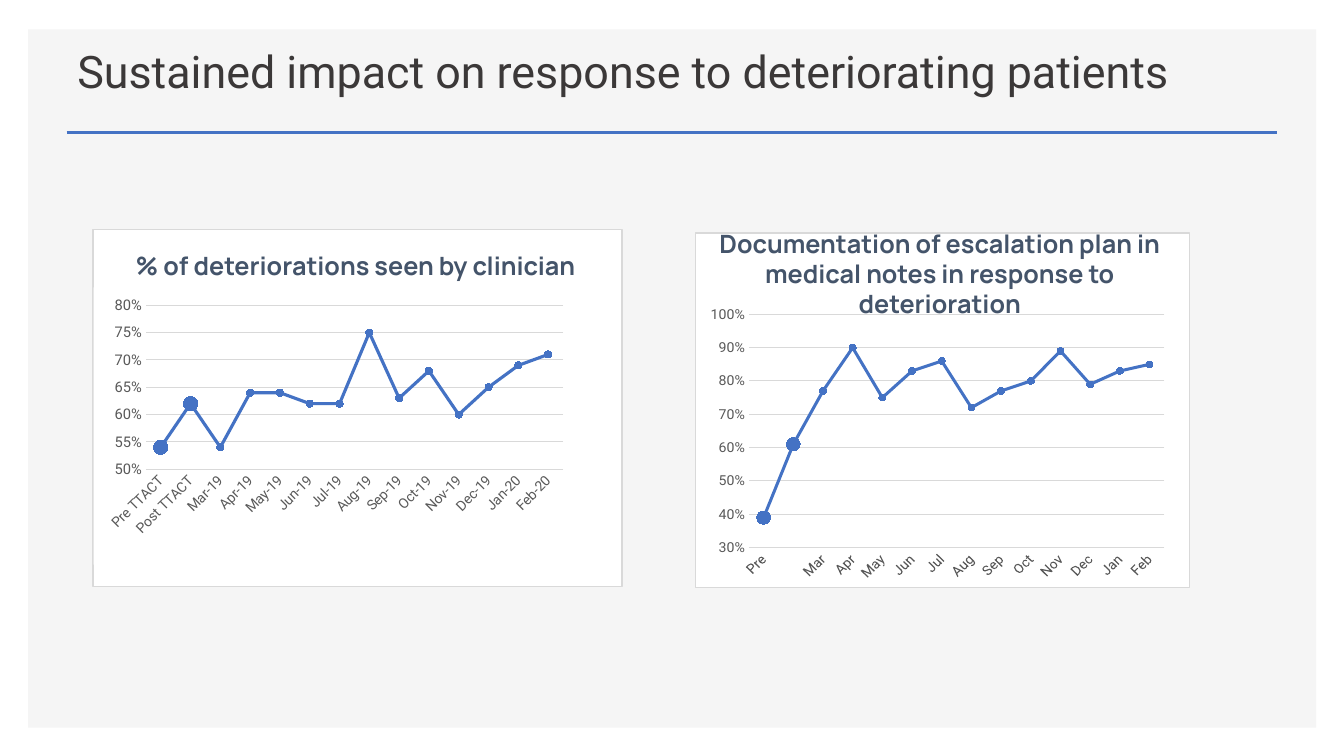
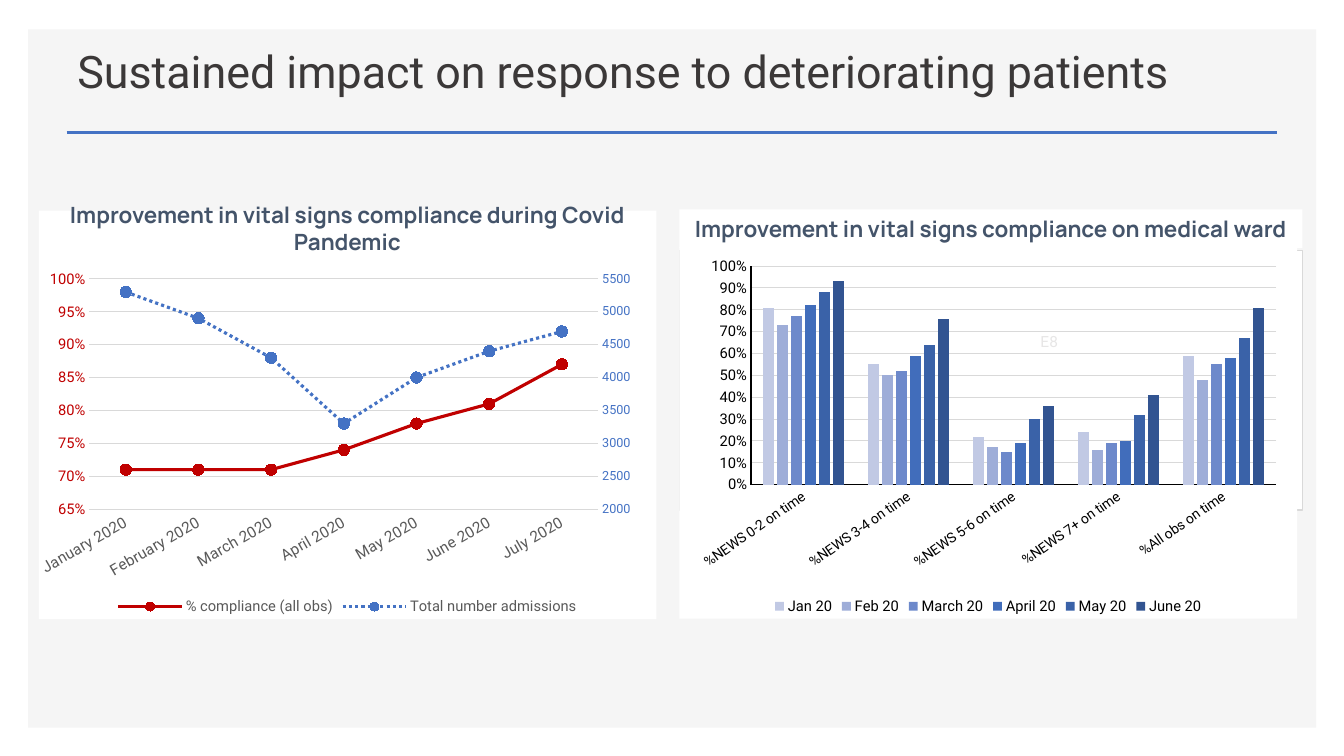
from copy import deepcopy

from pptx import Presentation
from pptx.chart.axis import ValueAxis
from pptx.chart.data import CategoryChartData
from pptx.dml.color import RGBColor
from pptx.enum.chart import XL_CHART_TYPE, XL_LEGEND_POSITION, XL_MARKER_STYLE, XL_TICK_MARK
from pptx.enum.dml import MSO_LINE
from pptx.enum.shapes import MSO_CONNECTOR, MSO_SHAPE
from pptx.enum.text import MSO_ANCHOR, MSO_AUTO_SIZE, PP_ALIGN
from pptx.oxml import parse_xml
from pptx.oxml.ns import nsdecls, qn
from pptx.util import Cm, Pt

WHITE, PALE, GRID, GREY, BLACK = "FFFFFF", "F5F5F5", "D9D9D9", "595959", "000000"
BLUE, RED, SLATE, CHARCOAL, FAINT = "4472C4", "C00000", "44546A", "3B3838", "E7E6E6"
BODY_FONT, HEADING_FONT = "Roboto", "Manrope"
TITLE = "Sustained impact on response to deteriorating patients"


def color(value):
    return RGBColor.from_string(value)


def style_font(font, size, value, name=BODY_FONT, bold=False):
    font.size, font.name, font.bold = Pt(size), name, bold
    font.color.rgb = color(value)


MONTHS = ["Mar", "Apr", "May", "Jun", "Jul", "Aug", "Sep", "Oct", "Nov", "Dec", "Jan", "Feb"]
DATED_MONTHS = [f"{month}-{19 if i < 10 else 20}" for i, month in enumerate(MONTHS)]

escalation_chart = {
    "at": (17.91, 7.42, 11.66, 7.21), "kind": XL_CHART_TYPE.LINE_MARKERS_STACKED,
    "plot": (0.047, 0.075, 0.933, 0.878), "range": (0.3, 1, 0.1),
    "categories": ["Pre", ""] + MONTHS, "category_font": (10.5, GREY), "rotation": -45,
    "value_color": GREY, "axis_line": GRID, "marker": 5, "large_points": 2,
    "series": [("Series 1", BLUE, [0.39, 0.61, 0.77, 0.9, 0.75, 0.83, 0.86,
                                   0.72, 0.77, 0.8, 0.89, 0.79, 0.83, 0.85])],
}
clinician_chart = {
    "at": (2.36, 7.24, 13.16, 6.99), "kind": XL_CHART_TYPE.LINE_MARKERS,
    "plot": (0.1, 0.065, 0.799, 0.591), "range": (0.5, 0.8, 0.05),
    "categories": ["Pre TTACT", "Post TTACT"] + DATED_MONTHS,
    "category_font": (10, GREY), "rotation": -45,
    "value_color": GREY, "axis_line": GRID, "marker": 5, "large_points": 2,
    "series": [("Series 1", BLUE, [0.54, 0.62, 0.54, 0.64, 0.64, 0.62, 0.62,
                                   0.75, 0.63, 0.68, 0.6, 0.65, 0.69, 0.71])],
}
pandemic_chart = {
    "at": (0.97, 5.31, 15.57, 10.29), "kind": XL_CHART_TYPE.LINE_MARKERS,
    "plot": (0.082, 0.167, 0.824, 0.564), "range": (0.65, 1, 0.05),
    "categories": [f"{month} 2020" for month in
                   ("January", "February", "March", "April", "May", "June", "July")],
    "category_font": (11, GREY), "rotation": -30,
    "value_color": RED, "axis_line": GRID, "marker": 8, "large_points": 0,
    "legend_color": GREY, "right_range": (2000, 5500, 500),
    "series": [("% compliance (all obs)", RED, [0.71, 0.71, 0.71, 0.74, 0.78, 0.81, 0.87]),
               ("Total number admissions", BLUE, [5300, 4900, 4300, 3300, 4000, 4400, 4700])],
}
ward_chart = {
    "at": (17.12, 6.22, 15.57, 9.37), "kind": XL_CHART_TYPE.COLUMN_CLUSTERED,
    "plot": (0.116, 0.052, 0.85, 0.588), "range": (0, 1, 0.1),
    "categories": ["%NEWS 0-2 on time", "%NEWS 3-4 on time", "%NEWS 5-6 on time",
                   "%NEWS 7+ on time", "%All obs on time"],
    "category_font": (10, BLACK), "rotation": -35,
    "value_color": BLACK, "axis_line": BLACK, "legend_color": BLACK, "title": "E8",
    "series": [("Jan 20", "C1C9E4", [0.81, 0.55, 0.22, 0.24, 0.59]),
               ("Feb 20", "9EADD8", [0.73, 0.5, 0.17, 0.16, 0.48]),
               ("March 20", "6D89CB", [0.77, 0.52, 0.15, 0.19, 0.55]),
               ("April 20", "416DBB", [0.82, 0.59, 0.19, 0.2, 0.58]),
               ("May 20", "3A62A8", [0.88, 0.64, 0.3, 0.32, 0.67]),
               ("June 20", "325491", [0.93, 0.76, 0.36, 0.41, 0.81])],
}

# Each page: framed panels, charts, headings (place, size, fill, text)
pages = [
    {"panels": [(17.53, 5.87, 12.45, 8.94), (2.34, 5.79, 13.34, 8.99)],
     "charts": [escalation_chart, clinician_chart],
     "headings": [
         ((17.35, 5.99, 12.67, 1.8), 18, None,
          "Documentation of escalation plan in medical notes in response to deterioration"),
         ((2.51, 6.17, 12.9, 1.02), 18, WHITE, "% of deteriorations seen by clinician")]},
    {"panels": [(17.12, 6.32, 15.7, 6.53)],
     "charts": [pandemic_chart, ward_chart],
     "headings": [
         ((0.97, 5.26, 15.57, 0.97), 16, None,
          "Improvement in vital signs compliance during Covid Pandemic"),
         ((17.12, 5.28, 15.7, 0.97), 16, WHITE,
          "Improvement in vital signs compliance on medical ward")]},
]

deck = Presentation()
deck.slide_width, deck.slide_height = Cm(33.87), Cm(19.05)

for content in pages:
    page = deck.slides.add_slide(deck.slide_layouts[6])

    # Backdrop and framed panels
    backdrop = (0.71, 0.74, 32.46, 17.6)
    for place in [backdrop] + content["panels"]:
        panel = page.shapes.add_shape(MSO_SHAPE.RECTANGLE, *map(Cm, place))
        panel.shadow.inherit = False
        panel.fill.solid()
        if place == backdrop:
            panel.fill.fore_color.rgb = color(PALE)
            panel.line.fill.background()
        else:
            panel.fill.fore_color.rgb = color(WHITE)
            panel.line.color.rgb = color(GRID)
            panel.line.width = Pt(1)

    # Title and rule
    rule = page.shapes.add_connector(MSO_CONNECTOR.STRAIGHT, Cm(1.68), Cm(3.33), Cm(32.18), Cm(3.33))
    rule.line.color.rgb = color(BLUE)
    rule.line.width = Pt(2)
    rule._element.spPr.append(parse_xml(f"<a:effectLst {nsdecls('a')}/>"))
    title_box = page.shapes.add_textbox(Cm(1.7), Cm(1.12), Cm(30.48), Cm(1.8))
    title_box.text_frame.word_wrap = True
    title_box.text_frame.text = TITLE
    para = title_box.text_frame.paragraphs[0]
    para.line_spacing = 0.9
    style_font(para.runs[0].font, 32, CHARCOAL)

    # Charts
    for item in content["charts"]:
        data = CategoryChartData()
        data.categories = item["categories"]
        for name, _, values in item["series"]:
            data.add_series(name, values)
        chart = page.shapes.add_chart(item["kind"], *map(Cm, item["at"]), data).chart
        style_font(chart.font, 10, BLACK)
        chart.has_title = "title" in item
        chart.has_legend = "legend_color" in item
        if chart.has_legend:
            chart.legend.position = XL_LEGEND_POSITION.BOTTOM
            chart.legend.include_in_layout = False
            style_font(chart.legend.font, 10.5, item["legend_color"])
        plot = chart.plots[0]
        plot.vary_by_categories = False

        # Series
        columns = item["kind"] == XL_CHART_TYPE.COLUMN_CLUSTERED
        if columns:
            plot.gap_width, plot.overlap = 219, -27
        for series, (_, series_color, _) in zip(plot.series, item["series"]):
            if columns:
                series.format.fill.solid()
                series.format.fill.fore_color.rgb = color(series_color)
                continue
            series.smooth = False
            large_points = [series.points[i] for i in range(item["large_points"])]
            for target in [series] + large_points:
                target.format.line.color.rgb = color(series_color)
                target.format.line.width = Pt(2.25)
                marker = target.marker
                marker.style = XL_MARKER_STYLE.CIRCLE
                marker.size = item["marker"] if target is series else 10
                marker.format.fill.solid()
                marker.format.fill.fore_color.rgb = color(series_color)
                marker.format.line.color.rgb = color(series_color)

        # Second axis on the right
        axes = [(chart.value_axis, item["range"], 10.5, item["value_color"], "0%")]
        if "right_range" in item:
            plot.series[1].format.line.dash_style = MSO_LINE.ROUND_DOT
            left_lines = plot._element
            right_lines = deepcopy(left_lines)
            left_lines.remove(left_lines.findall(qn("c:ser"))[1])
            right_lines.remove(right_lines.findall(qn("c:ser"))[0])
            left_lines.addnext(right_lines)
            right_category = deepcopy(chart.category_axis._element)
            right_value = deepcopy(chart.value_axis._element)
            chart.value_axis._element.addnext(right_value)
            right_value.addnext(right_category)
            for element, number in zip(right_lines.findall(qn("c:axId")), ("5001", "5002")):
                element.set("val", number)
            for axis, own, other in ((right_category, "5001", "5002"), (right_value, "5002", "5001")):
                axis.find(qn("c:axId")).set("val", own)
                axis.find(qn("c:crossAx")).set("val", other)
            right_category.find(qn("c:delete")).set("val", "1")
            right_value.find(qn("c:axPos")).set("val", "r")
            right_value.find(qn("c:crosses")).set("val", "max")
            axes.append((ValueAxis(right_value), item["right_range"], 9, BLUE, "0"))

        # Axes
        for axis, (low, high, step), size, label_color, number_format in axes:
            axis.minimum_scale, axis.maximum_scale, axis.major_unit = low, high, step
            axis.major_tick_mark = axis.minor_tick_mark = XL_TICK_MARK.NONE
            axis.tick_labels.number_format = number_format
            axis.tick_labels.number_format_is_linked = False
            style_font(axis.tick_labels.font, size, label_color)
            axis.has_major_gridlines = axis is axes[0][0]
            if columns:
                axis.format.line.color.rgb = color(item["axis_line"])
                axis.format.line.width = Pt(0.75)
            else:
                axis.format.line.fill.background()
        grid_line = axes[0][0].major_gridlines.format.line
        grid_line.color.rgb = color(GRID)
        grid_line.width = Pt(0.75)
        category_axis = chart.category_axis
        category_axis.major_tick_mark = category_axis.minor_tick_mark = XL_TICK_MARK.NONE
        category_axis.format.line.color.rgb = color(item["axis_line"])
        category_axis.format.line.width = Pt(0.75)
        style_font(category_axis.tick_labels.font, *item["category_font"])
        body = category_axis._element.find(qn("c:txPr")).find(qn("a:bodyPr"))
        body.set("rot", str(item["rotation"] * 60000))
        body.set("vert", "horz")

        # Plot area place and white chart area
        left, top, width, height = item["plot"]
        plot_area = chart._chartSpace.chart.plotArea
        for layout in plot_area.findall(qn("c:layout")):
            plot_area.remove(layout)
        plot_area.insert(0, parse_xml(
            f'<c:layout {nsdecls("c")}><c:manualLayout><c:layoutTarget val="inner"/>'
            f'<c:xMode val="edge"/><c:yMode val="edge"/><c:x val="{left}"/><c:y val="{top}"/>'
            f'<c:w val="{width}"/><c:h val="{height}"/></c:manualLayout></c:layout>'))
        chart._chartSpace.chart.addnext(parse_xml(
            f'<c:spPr {nsdecls("c", "a")}><a:solidFill><a:srgbClr val="{WHITE}"/></a:solidFill>'
            '<a:ln><a:noFill/></a:ln></c:spPr>'))

        # Faint title inside the plot
        if chart.has_title:
            chart.chart_title.text_frame.text = item["title"]
            span = chart.chart_title.text_frame.paragraphs[0].runs[0]
            style_font(span.font, 11, FAINT)
            title_element = chart.chart_title._element
            title_element.find(qn("c:overlay")).set("val", "1")
            title_element.find(qn("c:layout")).append(parse_xml(
                f'<c:manualLayout {nsdecls("c")}><c:xMode val="edge"/><c:yMode val="edge"/>'
                '<c:x val="0.58"/><c:y val="0.22"/></c:manualLayout>'))

    # Chart headings
    for place, size, fill, text in content["headings"]:
        box = page.shapes.add_textbox(*map(Cm, place))
        if fill:
            box.fill.solid()
            box.fill.fore_color.rgb = color(fill)
        frame = box.text_frame
        frame.word_wrap = True
        frame.auto_size = MSO_AUTO_SIZE.SHAPE_TO_FIT_TEXT
        frame.vertical_anchor = MSO_ANCHOR.MIDDLE
        frame.text = text
        frame.paragraphs[0].alignment = PP_ALIGN.CENTER
        style_font(frame.paragraphs[0].runs[0].font, size, SLATE, HEADING_FONT, True)

deck.save("out.pptx")
